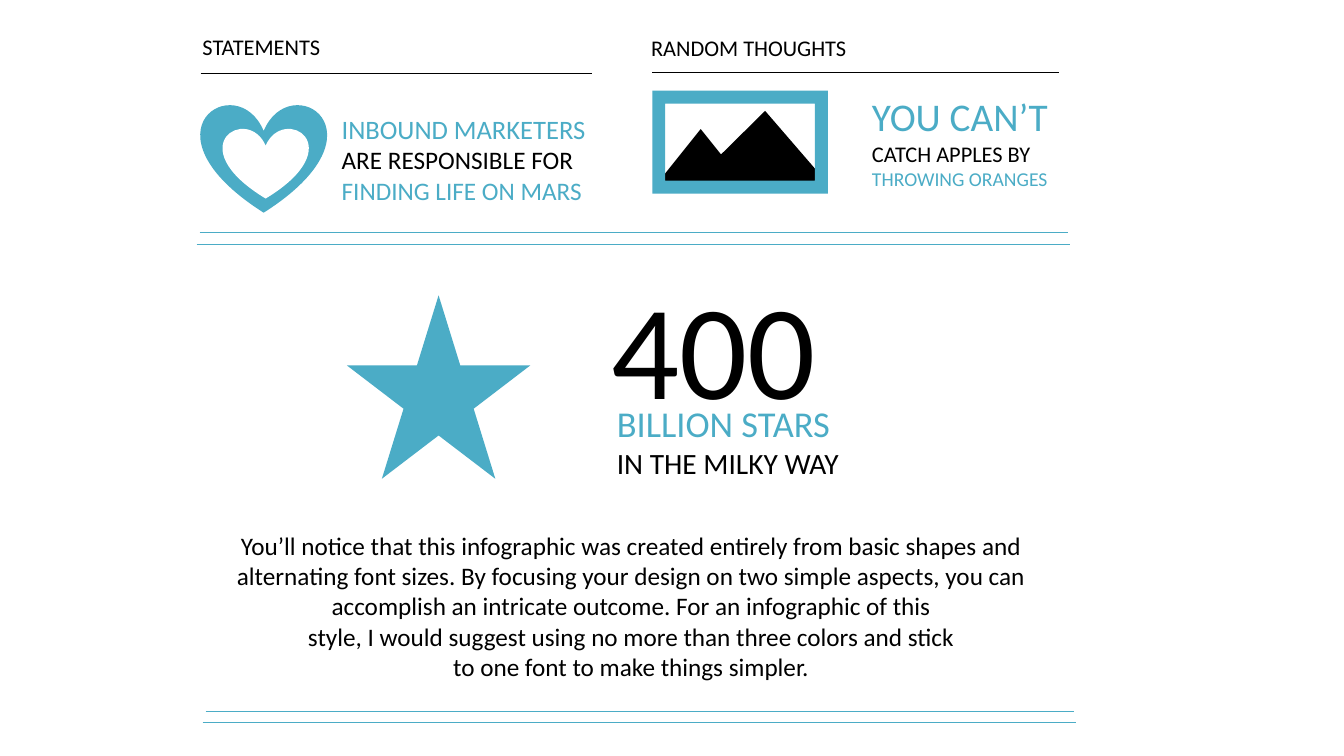
from pptx import Presentation
from pptx.dml.color import RGBColor
from pptx.enum.shapes import MSO_CONNECTOR, MSO_SHAPE
from pptx.enum.text import MSO_AUTO_SIZE, PP_ALIGN
from pptx.oxml.ns import qn
from pptx.util import Emu, Pt
from lxml import etree

# Lengths are px, 100 to the inch
EMU_PER_PX = 9144
BLANK_LAYOUT = 6
FONT = "Calibri"

BLACK = RGBColor(0x00, 0x00, 0x00)
WHITE = RGBColor(0xFF, 0xFF, 0xFF)
TEAL = RGBColor(0x4B, 0xAC, 0xC6)

STRAIGHT = MSO_CONNECTOR.STRAIGHT
HEART = MSO_SHAPE.HEART
TRIANGLE = MSO_SHAPE.ISOSCELES_TRIANGLE
FRAME = MSO_SHAPE.FRAME
STAR = MSO_SHAPE.STAR_5_POINT
LEFT = PP_ALIGN.LEFT
CENTER = PP_ALIGN.CENTER
FIT_SHAPE = MSO_AUTO_SIZE.SHAPE_TO_FIT_TEXT


def px(*lengths):
    return [Emu(length * EMU_PER_PX) for length in lengths]


def add_span(para, text, size=18, color=BLACK):
    span = para.add_run()
    span.text = text
    span.font.name = FONT
    span.font.size = Pt(size)
    span.font.color.rgb = color


def add_text(page, place, paragraphs, align=LEFT):
    """Each paragraph is a list of (text, format) spans."""
    box = page.shapes.add_textbox(*px(*place))
    frame = box.text_frame
    frame.word_wrap = True
    frame.auto_size = FIT_SHAPE
    for index, spans in enumerate(paragraphs):
        para = frame.add_paragraph() if index else frame.paragraphs[0]
        para.alignment = align
        for text, style in spans:
            add_span(para, text, **style)


def add_icon_part(page, kind, place, color, adjustment=None):
    shape = page.shapes.add_shape(kind, *px(*place))
    shape.shadow.inherit = False
    shape.fill.solid()
    shape.fill.fore_color.rgb = color
    shape.line.fill.background()
    if adjustment is not None:
        shape.adjustments[0] = adjustment


def add_rule(page, left, right, top, color=TEAL, width=0.5):
    rule = page.shapes.add_connector(STRAIGHT, *px(left, top, right, top))
    rule.line.color.rgb = color
    rule.line.width = Pt(width)
    etree.SubElement(rule._element.spPr, qn("a:effectLst"))


def add_double_rule(page, left, top):
    add_rule(page, left + 3, left + 864, top)
    add_rule(page, left, left + 866, top + 11)


def add_statements(page):
    add_text(page, (191, 28, 206, 37), [[("STATEMENTS", {"size": 16})]])
    add_rule(page, 199, 587, 73, color=BLACK, width=1)
    add_icon_part(page, HEART, (199, 103, 125, 108), TEAL)
    add_icon_part(page, HEART, (221, 127, 85, 70), WHITE)
    add_text(page, (329, 107, 312, 103), [
        [("INBOUND MARKETERS", {"size": 19, "color": TEAL})],
        [("ARE RESPONSIBLE FOR ", {}),
         ("FINDING LIFE ON MARS", {"color": TEAL})],
    ])


def add_random_thoughts(page):
    add_text(page, (636, 29, 289, 37), [[("RANDOM THOUGHTS", {"size": 16})]])
    add_rule(page, 647, 1050, 72, color=BLACK, width=1)
    # Framed mountains
    add_icon_part(page, TRIANGLE, (651, 128, 88, 55), BLACK)
    add_icon_part(page, TRIANGLE, (686, 110, 135, 72), BLACK, adjustment=0.54)
    add_icon_part(page, FRAME, (647, 90, 174, 102), TEAL)
    add_text(page, (855, 87, 238, 108), [
        [("YOU CAN’T", {"size": 28, "color": TEAL})],
        [("CATCH APPLES BY", {"size": 16})],
        [("THROWING ORANGES", {"size": 14, "color": TEAL})],
    ])


def add_star_fact(page):
    add_icon_part(page, STAR, (344, 293, 182, 182), TEAL)
    add_text(page, (597, 258, 275, 172), [[("400", {"size": 96})]])
    add_text(page, (602, 393, 303, 89), [
        [("BILLION STARS", {"size": 26, "color": TEAL})],
        [("IN THE MILKY WAY", {"size": 21})],
    ])


def add_closing_note(page):
    sentences = (
        "You’ll notice that this infographic was created entirely from basic "
        "shapes and alternating font sizes. By focusing your design on two "
        "simple aspects, you can accomplish an intricate outcome. For an "
        "infographic of this",
        "style, I would suggest using no more than three colors and stick",
        "to one font to make things simpler.",
    )
    add_text(page, (201, 521, 850, 162),
             [[(sentence, {})] for sentence in sentences], align=CENTER)


def main():
    deck = Presentation()
    deck.slide_width, deck.slide_height = px(1333, 750)
    page = deck.slides.add_slide(deck.slide_layouts[BLANK_LAYOUT])

    # Top row
    add_statements(page)
    add_random_thoughts(page)
    add_double_rule(page, 195, 231)

    # Main fact and note
    add_star_fact(page)
    add_closing_note(page)
    add_double_rule(page, 201, 706)

    deck.save("out.pptx")


if __name__ == "__main__":
    main()
